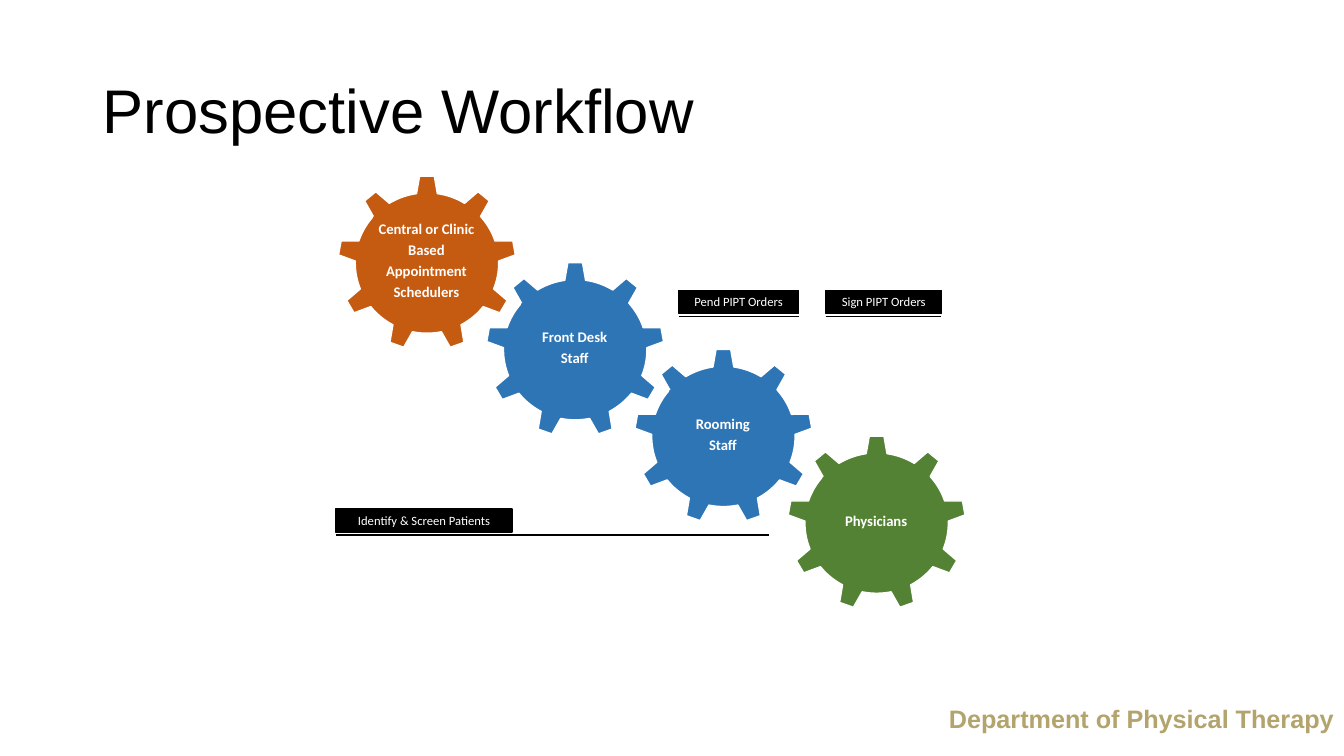
from lxml import etree
from pptx import Presentation
from pptx.dml.color import RGBColor
from pptx.enum.shapes import MSO_CONNECTOR, MSO_SHAPE
from pptx.enum.text import MSO_ANCHOR, PP_ALIGN
from pptx.oxml.ns import qn
from pptx.util import Pt

PX = 9144  # EMU in one px, at 100 px to the inch
GEAR, RECT = MSO_SHAPE.GEAR_9, MSO_SHAPE.RECTANGLE
LINE = MSO_CONNECTOR.STRAIGHT
LEFT, CENTER, RIGHT = PP_ALIGN.LEFT, PP_ALIGN.CENTER, PP_ALIGN.RIGHT
MIDDLE, TOP = MSO_ANCHOR.MIDDLE, MSO_ANCHOR.TOP
BLACK, WHITE, GOLD = "000000", "FFFFFF", "B2A46C"
GREEN, BLUE, ORANGE = "548235", "2E75B6", "C55A11"


def color(code):
    return RGBColor.from_string(code)


class Board:
    """Draws on one slide in a shared style."""

    head, body = "Arial", "Calibri"

    def __init__(self, slide):
        self.shapes = slide.shapes

    def fill_text(self, shape, text, font, size, code, align=CENTER,
                  anchor=MIDDLE, bold=False, pad=None, lead=None, after=None):
        frame = shape.text_frame
        frame.text = text
        frame.word_wrap = True
        frame.vertical_anchor = anchor
        if pad is not None:
            frame.margin_left = frame.margin_right = pad * PX
            frame.margin_top = frame.margin_bottom = pad * PX
        for para in frame.paragraphs:
            para.alignment = align
            para.line_spacing = lead
            para.space_after = after
            for run in para.runs:
                run.font.name = font
                run.font.size = Pt(size)
                run.font.bold = bold
                run.font.color.rgb = color(code)

    def text(self, box, text, size, code, **style):
        shape = self.shapes.add_textbox(*(n * PX for n in box))
        self.fill_text(shape, text, self.head, size, code, **style)

    def shape(self, kind, box, fill, edge=None):
        shape = self.shapes.add_shape(kind, *(n * PX for n in box))
        shape.shadow.inherit = False
        shape.fill.solid()
        shape.fill.fore_color.rgb = color(fill)
        if edge:
            shape.line.color.rgb = color(edge)
            shape.line.width = Pt(1)
        else:
            shape.line.fill.background()
        return shape

    def gear(self, x, y, text, fill):
        self.shape(GEAR, (x, y, 177, 174), fill, WHITE)
        core = self.shape(RECT, (x + 35, y + 41, 106, 89), fill)
        self.fill_text(core, text, self.body, 10.5, WHITE, bold=True,
                       pad=1, lead=0.9, after=Pt(3.7))

    def label(self, x, y, width, text):
        shape = self.shape(RECT, (x, y, width, 23), BLACK, BLACK)
        self.fill_text(shape, text, self.body, 9, WHITE)

    def rule(self, x, y, width):
        line = self.shapes.add_connector(
            LINE, x * PX, y * PX, (x + width) * PX, y * PX)
        line.line.color.rgb = color(BLACK)
        line.line.width = Pt(1.25)
        etree.SubElement(line._element.spPr, qn("a:effectLst"))


def main():
    deck = Presentation()
    deck.slide_width, deck.slide_height = 1333 * PX, 750 * PX
    board = Board(deck.slides.add_slide(deck.slide_layouts[6]))

    board.text((657, 693, 676, 40), "Department of Physical Therapy", 18,
               GOLD, align=RIGHT, anchor=TOP, bold=True)

    gears = [
        (335, "Central or Clinic\nBased\nAppointment\nSchedulers", ORANGE),
        (482, "Front Desk\nStaff", BLUE),
        (629, "Rooming\nStaff", BLUE),
        (781, "Physicians", GREEN),
    ]
    for step, (x, text, fill) in reversed(list(enumerate(gears))):
        board.gear(x, 174 + 86 * step, text, fill)

    labels = [
        (673, 288, 119, 119, "Pend PIPT Orders"),
        (819, 288, 115, 114, "Sign PIPT Orders"),
        (333, 505, 175, 430, "Identify & Screen Patients"),
    ]
    for x, y, width, span, text in labels:
        board.rule(x, y + 26, span)
        board.label(x, y, width, text)

    board.text((92, 40, 1150, 145), "Prospective Workflow", 44, BLACK,
               align=LEFT, lead=0.9)
    deck.save("out.pptx")


if __name__ == "__main__":
    main()
